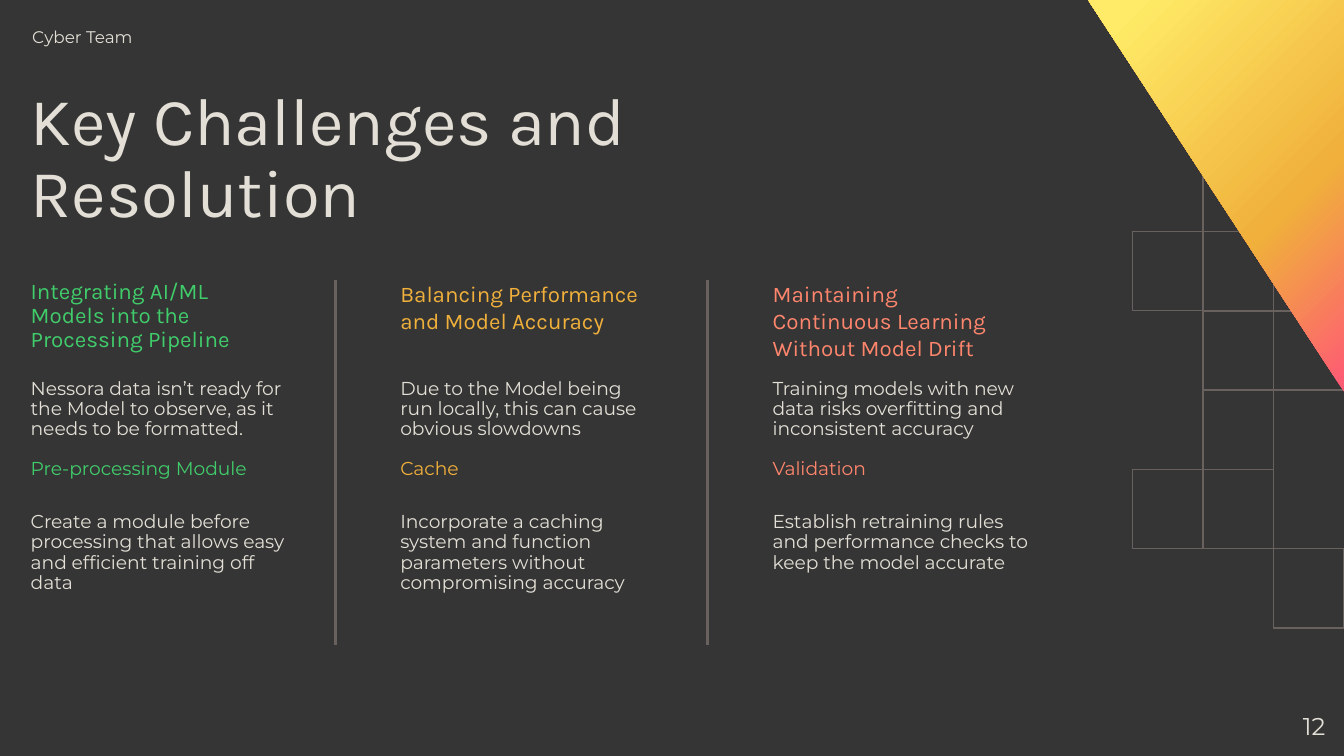
from copy import deepcopy

from lxml import etree
from pptx import Presentation
from pptx import util as u
from pptx.dml.color import RGBColor
from pptx.enum import shapes, text
from pptx.oxml.ns import qn

CHARCOAL = RGBColor(0x35, 0x35, 0x35)
CREAM = RGBColor(0xE3, 0xDF, 0xD6)
TAUPE = RGBColor(0x69, 0x61, 0x5E)
GREEN = RGBColor(0x41, 0xCC, 0x6B)
AMBER = RGBColor(0xF0, 0xB0, 0x3B)
CORAL = RGBColor(0xFF, 0x86, 0x6D)
PINK = RGBColor(0xFF, 0x57, 0x77)
YELLOW = RGBColor(0xFF, 0xEB, 0x67)

HEADING, BODY = "Karla", "Montserrat"
UNIT = u.Inches(0.1)  # the slide is a grid of 100 columns by 56.25 rows


def grid(*counts):
    """Turn counts of columns or rows into lengths."""
    return [u.Emu(round(count * UNIT)) for count in counts]


class Canvas:
    """Style and current slide; all lengths are grid columns and rows."""

    def __init__(self, deck):
        self.page = deck.slides.add_slide(deck.slide_layouts[6])
        self.page.background.fill.solid()
        self.page.background.fill.fore_color.rgb = CHARCOAL

    def label(self, at, lines, font, size, spacing=None, gap=0,
              insets=(1, 1, 1, 1), align=text.PP_ALIGN.LEFT):
        """Add a text box; lines are (wording, colour) pairs."""
        frame = self.page.shapes.add_textbox(*grid(*at)).text_frame
        frame.word_wrap = True
        frame.vertical_anchor = text.MSO_ANCHOR.TOP
        (frame.margin_left, frame.margin_top,
         frame.margin_right, frame.margin_bottom) = grid(*insets)
        for index, (wording, colour) in enumerate(lines):
            para = frame.add_paragraph() if index else frame.paragraphs[0]
            para.text = wording
            para.alignment = align
            para.font.name, para.font.size = font, u.Pt(size)
            para.font.color.rgb = colour
            if spacing:
                para.line_spacing = spacing
            if index:
                para.space_before = u.Pt(gap)

    def outline(self, *at):
        """Add an unfilled square of the background pattern."""
        square = self.page.shapes.add_shape(
            shapes.MSO_SHAPE.RECTANGLE, *grid(*at))
        square.shadow.inherit = False
        square.fill.background()
        square.line.color.rgb, square.line.width = TAUPE, u.Pt(0.75)

    def divider(self, column, top, bottom):
        """Add an upright rule."""
        rule = self.page.shapes.add_connector(
            shapes.MSO_CONNECTOR.STRAIGHT, *grid(column, top, column, bottom))
        rule.line.color.rgb, rule.line.width = TAUPE, u.Pt(1.5)
        etree.SubElement(rule._element.spPr, qn("a:effectLst"))

    def gradient_polygon(self, points, stops, angle):
        """Add a closed outline filled with (position, colour) stops."""
        start, *rest = [grid(*point) for point in points]
        builder = self.page.shapes.build_freeform(*start)
        builder.add_line_segments(rest, close=True)
        polygon = builder.convert_to_shape()
        polygon.shadow.inherit = False
        polygon.line.fill.background()
        polygon.fill.gradient()
        polygon.fill.gradient_angle = angle
        stop_list = polygon._element.spPr.find(".//" + qn("a:gsLst"))
        while len(stop_list) < len(stops):
            stop_list.append(deepcopy(stop_list[0]))
        for stop, (position, colour) in zip(polygon.fill.gradient_stops, stops):
            stop.position, stop.color.rgb = position, colour


# Background pattern: the columns that hold a square, for each row
PATTERN = [(1, 2), (0, 1, 2), (1, 2), (1,), (0, 1), (2,)]

# Each challenge: left, colour, heading, heading spacing, problem, fix, details
CHALLENGES = [
    (1.3, GREEN, "Integrating AI/ML Models into the Processing Pipeline", 0.9,
     "Nessora data isn’t ready for the Model to observe, as it needs to be "
     "formatted.",
     "Pre-processing Module",
     "Create a module before processing that allows easy and efficient "
     "training off data"),
    (28.8, AMBER, "Balancing Performance and Model Accuracy", None,
     "Due to the Model being run locally, this can cause obvious slowdowns",
     "Cache",
     "Incorporate a caching system and function parameters without "
     "compromising accuracy"),
    (56.5, CORAL, "Maintaining Continuous Learning Without Model Drift", None,
     "Training models with new data risks overfitting and inconsistent "
     "accuracy",
     "Validation",
     "Establish retraining rules and performance checks to keep the model "
     "accurate"),
]


def main():
    deck = Presentation()
    deck.slide_width, deck.slide_height = grid(100, 56.25)
    canvas = Canvas(deck)

    # Corner decoration
    for row, columns in enumerate(PATTERN):
        for column in columns:
            canvas.outline(84.27 + 5.24 * column, 11.33 + 5.9 * row, 5.24, 5.9)
    canvas.gradient_polygon([(80.9, -0.1), (100.1, -0.1), (100.1, 29.3)],
                            [(0, PINK), (0.37, AMBER), (0.92, YELLOW),
                             (1, YELLOW)], angle=135)

    # Header and title
    canvas.label((0.4, 1.2, 17.3, 2.1), [("Cyber Team", CREAM)], BODY, 9,
                 insets=(2, 1, 1, 1))
    canvas.label((1.3, 5.5, 66.2, 12.9),
                 [("Key Challenges and Resolution", CREAM)], HEADING, 36,
                 spacing=0.9)

    # Three challenge columns
    for left, colour, heading, spacing, problem, fix, details in CHALLENGES:
        canvas.label((left, 20.85, 20.1, 5.7), [(heading, colour)], HEADING,
                     12, spacing=spacing, insets=(1, 0, 1, 1))
        for top, lines in ((27.23, [(problem, CREAM), (fix, colour)]),
                           (37.14, [(details, CREAM)])):
            canvas.label((left, top, 20.1, 9.7), lines, BODY, 10,
                         spacing=0.9, gap=10.5, insets=(1, 1, 0, 1))

    # Rules between the columns
    for column in (24.97, 52.67):
        canvas.divider(column, 20.84, 48)

    # Page number
    canvas.label((93.6, 51.95, 6, 4.3), [("12", CREAM)], BODY, 13,
                 align=text.PP_ALIGN.RIGHT)

    deck.save("out.pptx")


if __name__ == "__main__":
    main()
